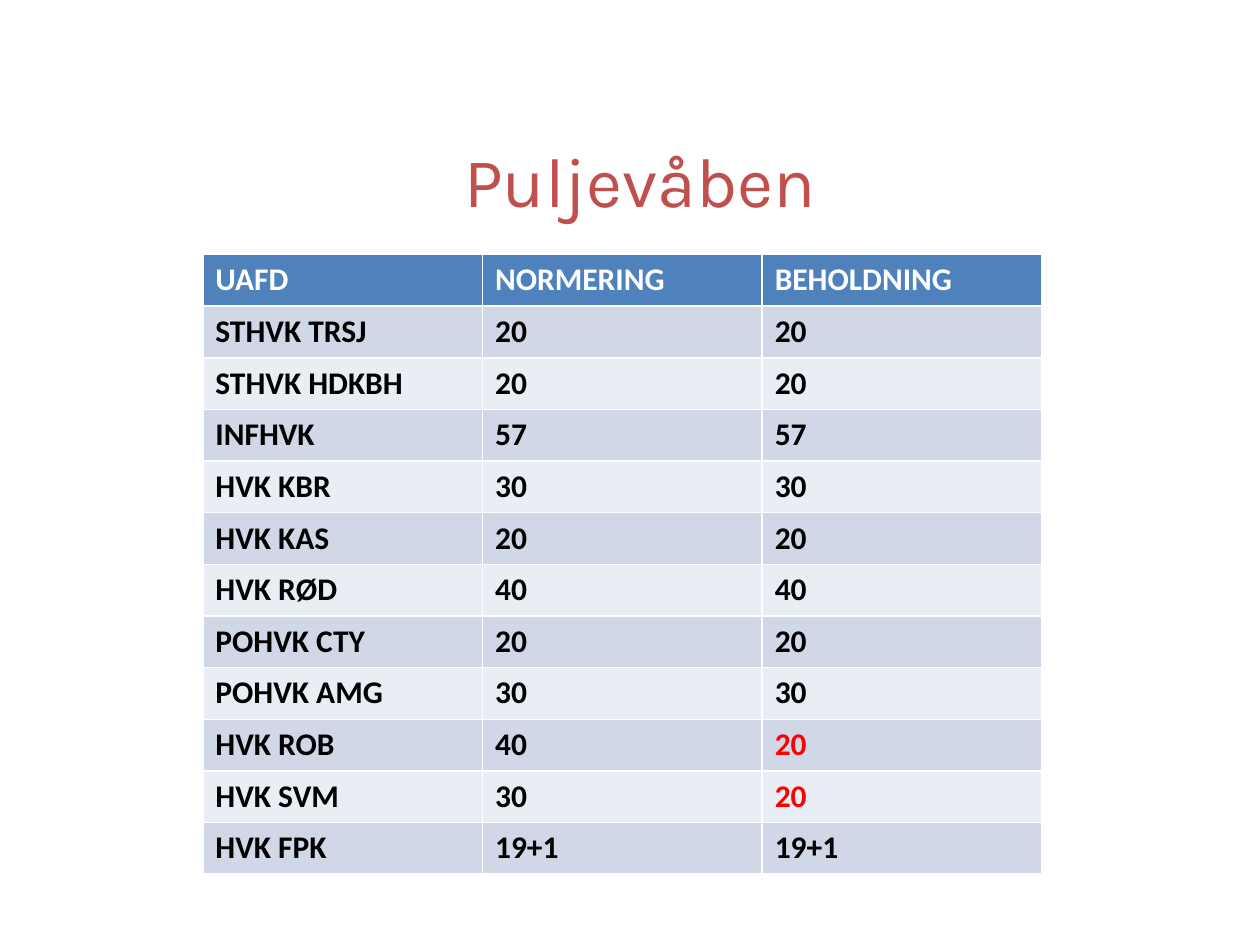
from pptx import Presentation
from pptx.dml.color import RGBColor
from pptx.enum.text import MSO_ANCHOR, PP_ALIGN
from pptx.util import Inches, Pt

CENTER = PP_ALIGN.CENTER
MIDDLE = MSO_ANCHOR.MIDDLE
TITLE_ONLY = 5

WHITE = RGBColor(0xFF, 0xFF, 0xFF)
BLACK = RGBColor(0x00, 0x00, 0x00)
RED = RGBColor(0xFF, 0x00, 0x00)
BRICK = RGBColor(0xC0, 0x50, 0x4D)
BLUE = RGBColor(0x4F, 0x81, 0xBD)
BANDS = (RGBColor(0xD0, 0xD8, 0xE8), RGBColor(0xE9, 0xED, 0xF4))

TABLE_LEFT, TABLE_TOP = 1.61, 2.02
COLUMN_WIDTH, ROW_HEIGHT = 2.22, 0.41

HEADINGS = ("UAFD", "NORMERING", "BEHOLDNING")
WEAPONS = (
    ("STHVK TRSJ", "20", "20"),
    ("STHVK HDKBH", "20", "20"),
    ("INFHVK", "57", "57"),
    ("HVK KBR", "30", "30"),
    ("HVK KAS", "20", "20"),
    ("HVK RØD", "40", "40"),
    ("POHVK CTY", "20", "20"),
    ("POHVK AMG", "30", "30"),
    ("HVK ROB", "40", "20"),
    ("HVK SVM", "30", "20"),
    ("HVK FPK", "19+1", "19+1"),
)


def style_font(paragraph, name, size, color, bold=False):
    font = paragraph.font
    font.name = name
    font.size = Pt(size)
    font.bold = bold
    font.color.rgb = color


def add_title(slide, text):
    title = slide.shapes.title
    title.left, title.top = Inches(1.14), Inches(0.99)
    title.width, title.height = Inches(7.88), Inches(0.87)
    title.text_frame.text = text
    title.text_frame.vertical_anchor = MIDDLE
    heading = title.text_frame.paragraphs[0]
    heading.alignment = CENTER
    style_font(heading, "Karla", 40, BRICK)


def fill_cell(cell, text, background, color):
    cell.text = text
    cell.fill.solid()
    cell.fill.fore_color.rgb = background
    style_font(cell.text_frame.paragraphs[0], "Calibri", 18, color, bold=True)


def add_weapons_table(slide):
    row_count, column_count = len(WEAPONS) + 1, len(HEADINGS)
    table = slide.shapes.add_table(
        row_count, column_count, Inches(TABLE_LEFT), Inches(TABLE_TOP),
        Inches(column_count * COLUMN_WIDTH), Inches(row_count * ROW_HEIGHT),
    ).table
    for column, heading in enumerate(HEADINGS):
        fill_cell(table.cell(0, column), heading, BLUE, WHITE)
    for row, (unit, norm, stock) in enumerate(WEAPONS, start=1):
        band = BANDS[(row - 1) % 2]
        stock_color = BLACK if stock == norm else RED
        fill_cell(table.cell(row, 0), unit, band, BLACK)
        fill_cell(table.cell(row, 1), norm, band, BLACK)
        fill_cell(table.cell(row, 2), stock, band, stock_color)


def main():
    presentation = Presentation()
    presentation.slide_width, presentation.slide_height = Inches(10), Inches(7.5)
    slide = presentation.slides.add_slide(presentation.slide_layouts[TITLE_ONLY])
    add_title(slide, "Puljevåben")
    add_weapons_table(slide)
    presentation.save("out.pptx")


if __name__ == "__main__":
    main()
